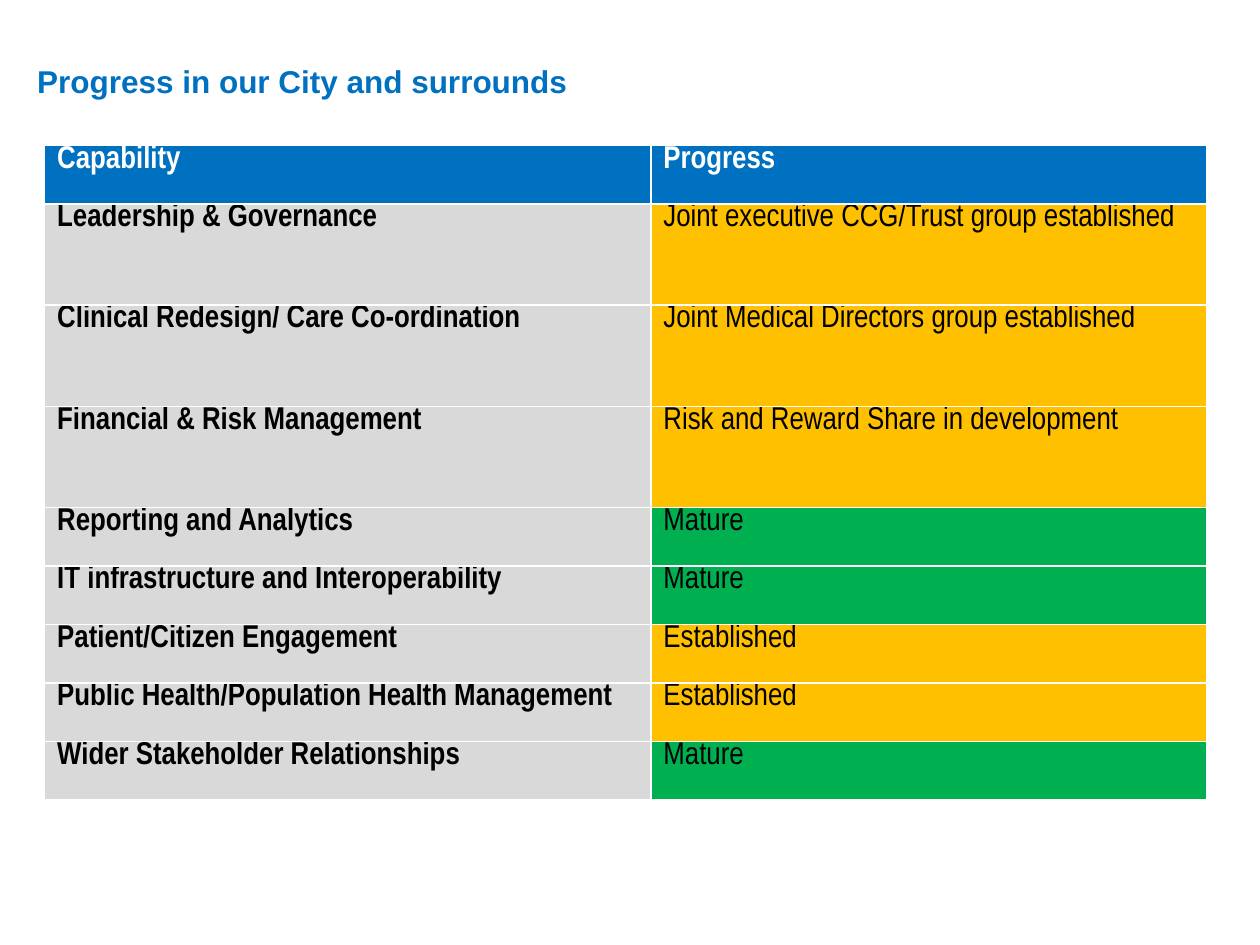
from pptx import Presentation
from pptx.dml.color import RGBColor
from pptx.util import Cm, Pt

BLUE, GREY, AMBER, GREEN = "0070C0", "D9D9D9", "FFC000", "00B050"
WHITE, BLACK = "FFFFFF", "000000"
SHORT_ROW, TALL_ROW = 1.18, 2.04
COLUMN_WIDTHS = (12.22, 11.2)

CAPABILITIES = [
    ("Leadership & Governance", "Joint executive CCG/Trust group established", AMBER, TALL_ROW),
    ("Clinical Redesign/ Care Co-ordination", "Joint Medical Directors group established", AMBER, TALL_ROW),
    ("Financial & Risk Management", "Risk and Reward Share in development", AMBER, TALL_ROW),
    ("Reporting and Analytics", "Mature", GREEN, SHORT_ROW),
    ("IT infrastructure and Interoperability", "Mature", GREEN, SHORT_ROW),
    ("Patient/Citizen Engagement", "Established", AMBER, SHORT_ROW),
    ("Public Health/Population Health Management", "Established", AMBER, SHORT_ROW),
    ("Wider Stakeholder Relationships", "Mature", GREEN, SHORT_ROW),
]


def rgb(value):
    return RGBColor.from_string(value)


class SlideBuilder:
    """Holds the text style and the current slide, and adds elements to it."""

    title_font = "Arial"
    table_font = "Arial Narrow"
    size = Pt(18)

    def __init__(self, slide):
        self.slide = slide

    def set_text(self, frame, text, font_name, color, bold):
        paragraph = frame.paragraphs[0]
        paragraph.text = text
        font = paragraph.font
        font.name, font.size, font.bold = font_name, self.size, bold
        font.color.rgb = rgb(color)

    def title(self, text, left, top, width, height):
        heading = self.slide.shapes.add_textbox(Cm(left), Cm(top), Cm(width), Cm(height))
        heading.text_frame.word_wrap = True
        self.set_text(heading.text_frame, text, self.title_font, BLUE, True)

    def cell(self, cell, text, fill, color=BLACK, bold=False):
        cell.margin_top = cell.margin_bottom = 0
        cell.fill.solid()
        cell.fill.fore_color.rgb = rgb(fill)
        self.set_text(cell.text_frame, text, self.table_font, color, bold)

    def progress_table(self, headings, capabilities, left, top):
        heights = [SHORT_ROW] + [height for *_, height in capabilities]
        table = self.slide.shapes.add_table(
            len(heights), len(headings), Cm(left), Cm(top),
            Cm(sum(COLUMN_WIDTHS)), Cm(sum(heights))).table
        table.horz_banding = False
        for column, width in zip(table.columns, COLUMN_WIDTHS):
            column.width = Cm(width)
        for row, height in zip(table.rows, heights):
            row.height = Cm(height)
        for index, heading in enumerate(headings):
            self.cell(table.cell(0, index), heading, BLUE, WHITE, True)
        for index, (capability, progress, status, _) in enumerate(capabilities, 1):
            self.cell(table.cell(index, 0), capability, GREY, bold=True)
            self.cell(table.cell(index, 1), progress, status)


def main():
    deck = Presentation()
    deck.slide_width, deck.slide_height = Cm(25.4), Cm(19.05)
    builder = SlideBuilder(deck.slides.add_slide(deck.slide_layouts[6]))
    builder.title("Progress in our City and surrounds", 0.5, 1.12, 11.8, 1.2)
    builder.progress_table(("Capability", "Progress"), CAPABILITIES, 0.9, 2.93)
    deck.save("out.pptx")


if __name__ == "__main__":
    main()
